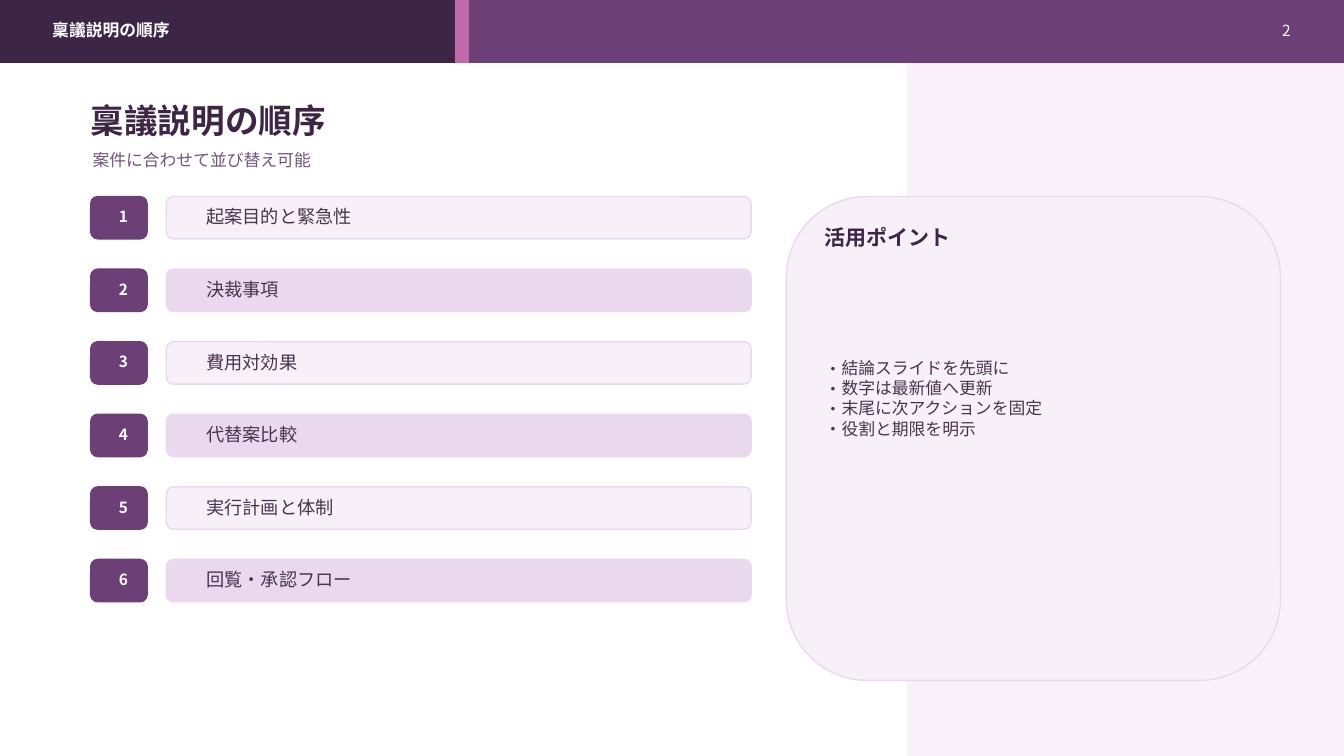
from lxml import etree
from pptx import Presentation
from pptx.dml.color import RGBColor
from pptx.enum.shapes import MSO_SHAPE as Shape
from pptx.enum.text import MSO_ANCHOR as Anchor, MSO_AUTO_SIZE as AutoSize, PP_ALIGN as Align
from pptx.oxml.ns import qn
from pptx.util import Emu, Pt

PX = 9144  # 100 px to the inch
THEME = {
    "dark": "3D2645", "purple": "6D3F77", "pink": "C06AA9", "pale": "F8F0F9",
    "lilac": "EAD9EE", "ink": "4A3350", "muted": "71557A", "white": "FFFFFF",
    "font": "Noto Sans CJK JP", "title_font": "Cambria",
    "title": 24, "heading": 15, "row": 13, "body": 12, "small": 11,
}

deck = Presentation()
deck.slide_width, deck.slide_height = Emu(1333 * PX), Emu(750 * PX)
page = deck.slides.add_slide(deck.slide_layouts[1])


def add_block(kind, place, fill, line):
    block = page.shapes.add_shape(kind, *[Emu(n * PX) for n in place])
    block.shadow.inherit = False
    block.fill.solid()
    block.fill.fore_color.rgb = RGBColor.from_string(THEME[fill])
    block.line.color.rgb = RGBColor.from_string(THEME[line])
    block.line.width = Pt(1)
    return block


def write(box, place, text, size, color, bold=False, align=Align.LEFT, font="font", bullet=None):
    box.left, box.top, box.width, box.height = [Emu(n * PX) for n in place]
    frame = box.text_frame
    frame.text = text
    frame.word_wrap = True
    frame.auto_size = AutoSize.NONE
    frame.vertical_anchor = Anchor.MIDDLE
    for para in frame.paragraphs:
        para.alignment = align
        para.space_before = Pt(0)
        if bullet:
            props = para._p.get_or_add_pPr()
            indent = Pt(THEME[size])
            props.set("marL", str(indent))
            props.set("indent", str(-indent))
            etree.SubElement(props, qn("a:buFont")).set("typeface", THEME[font])
            etree.SubElement(props, qn("a:buChar")).set("char", bullet)
        for span in para.runs:
            span.font.name = THEME[font]
            span.font.size = Pt(THEME[size])
            span.font.bold = bold
            span.font.color.rgb = RGBColor.from_string(THEME[color])


def new_box():
    return page.shapes.add_textbox(0, 0, 0, 0)


# Side panel and header band
panel = add_block(Shape.RECTANGLE, (900, 55, 433, 695), "pale", "pale")
panel_color = panel.fill._xPr.find(qn("a:solidFill"))[0]
etree.SubElement(panel_color, qn("a:alpha")).set("val", "88000")
for left, width, color in [(0, 1333, "purple"), (0, 460, "dark"), (452, 12, "pink")]:
    add_block(Shape.RECTANGLE, (left, 0, width, 62), color, color)
write(new_box(), (42, 17, 880, 26), "稟議説明の順序", "body", "white", bold=True)
write(new_box(), (1215, 17, 75, 26), "2", "small", "white", align=Align.RIGHT)

# Title and subtitle
title = page.shapes.title
write(title, (80, 95, 1140, 48), "稟議説明の順序", "title", "dark", bold=True, font="title_font")
write(new_box(), (82, 144, 1120, 30), "案件に合わせて並び替え可能", "body", "muted")

# Numbered agenda rows
agenda = ["起案目的と緊急性", "決裁事項", "費用対効果", "代替案比較", "実行計画と体制", "回覧・承認フロー"]
for index, topic in enumerate(agenda):
    top = 195 + 72 * index
    add_block(Shape.ROUNDED_RECTANGLE, (90, top, 56, 42), "purple", "purple")
    write(new_box(), (108, top + 10, 20, 20), str(index + 1), "small", "white", bold=True, align=Align.CENTER)
    add_block(Shape.ROUNDED_RECTANGLE, (165, top, 580, 42), "lilac" if index % 2 else "pale", "lilac")
    write(new_box(), (195, top + 10, 520, 20), topic, "row", "ink")

# Tips card
add_block(Shape.ROUNDED_RECTANGLE, (780, 195, 490, 480), "pale", "lilac")
write(new_box(), (808, 220, 410, 30), "活用ポイント", "heading", "dark", bold=True)
tips = ["結論スライドを先頭に", "数字は最新値へ更新", "末尾に次アクションを固定", "役割と期限を明示"]
tip_list = page.placeholders[1]
write(tip_list, (808, 270, 420, 250), "\n".join(tips), "body", "ink", bullet="・")

# Bring the placeholders in front of the panels
for holder in (title, tip_list):
    page.shapes.element.append(holder.element)

deck.save("out.pptx")
